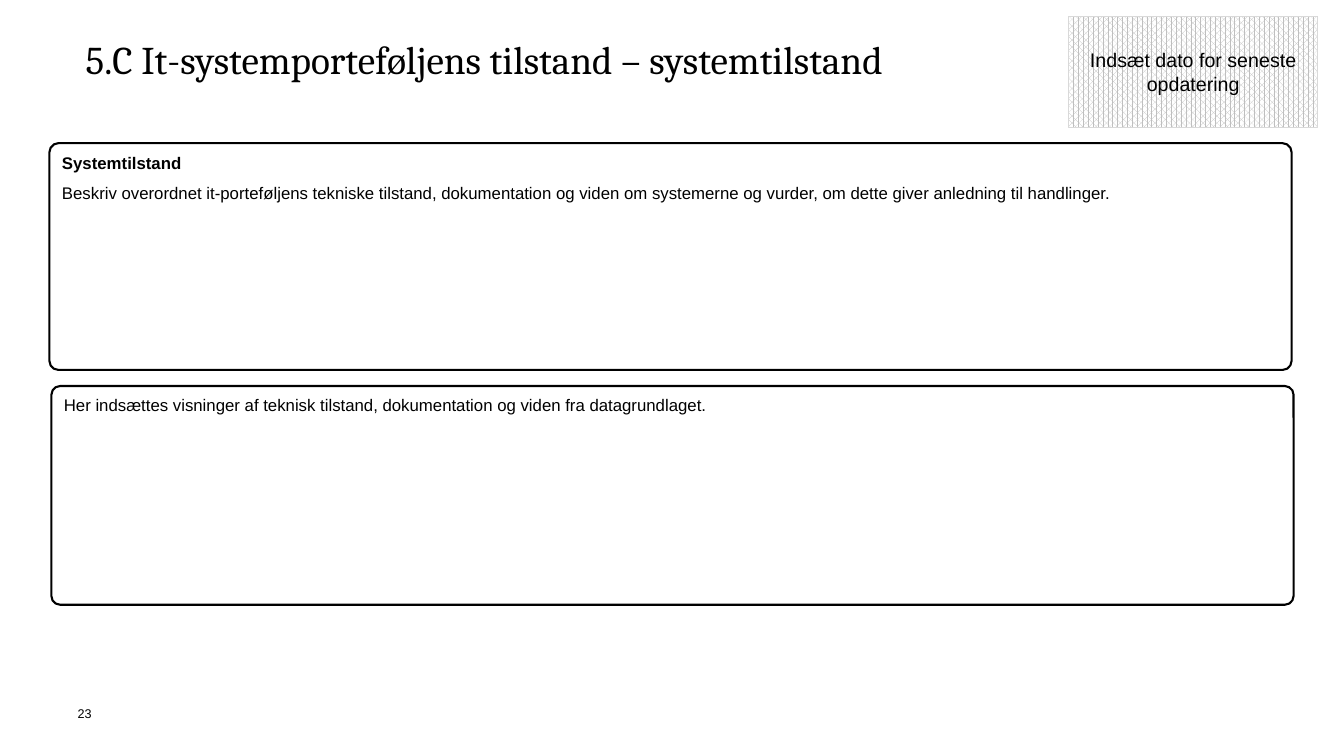
from dataclasses import dataclass

import pptx
import pptx.dml.color
import pptx.enum.dml
import pptx.enum.shapes
import pptx.enum.text
import pptx.util

Inches = pptx.util.Inches
Pt = pptx.util.Pt
RGB = pptx.dml.color.RGBColor
SHAPE = pptx.enum.shapes.MSO_SHAPE
ALIGN = pptx.enum.text.PP_ALIGN
ANCHOR = pptx.enum.text.MSO_ANCHOR


@dataclass(frozen=True)
class Theme:
    ink: RGB = RGB(0x00, 0x00, 0x00)
    paper: RGB = RGB(0xFF, 0xFF, 0xFF)
    hatch: RGB = RGB(0xBF, 0xBF, 0xBF)
    pale_line: RGB = RGB(0xD9, 0xD9, 0xD9)
    heading_font: str = "Cambria"
    body_font: str = "Arial"
    title_size: float = 28
    date_size: float = 14
    body_size: float = 12
    number_size: float = 9


THEME = Theme()


@dataclass(frozen=True)
class Box:
    left: float
    top: float
    width: float
    height: float

    def emu(self) -> tuple:
        return tuple(Inches(v) for v in (self.left, self.top, self.width, self.height))


@dataclass(frozen=True)
class Panel:
    box: Box
    lines: tuple[str, ...]
    has_heading: bool = False


PANELS = (
    Panel(
        Box(0.49, 1.42, 12.32, 2.25),
        (
            "Systemtilstand",
            "Beskriv overordnet it-porteføljens tekniske tilstand, dokumentation og viden "
            "om systemerne og vurder, om dette giver anledning til handlinger.",
        ),
        has_heading=True,
    ),
    Panel(
        Box(0.51, 3.83, 12.32, 2.17),
        ("Her indsættes visninger af teknisk tilstand, dokumentation og viden fra datagrundlaget.",),
    ),
)


def style(p, size: float, font: str = THEME.body_font, bold: bool = False,
          align=ALIGN.LEFT) -> None:
    p.alignment = align
    for r in p.runs:
        r.font.size = Pt(size)
        r.font.name = font
        r.font.bold = bold
        r.font.color.rgb = THEME.ink


def add_label(slide, box: Box, text: str, size: float, font: str, indent: float = 0):
    tf = slide.shapes.add_textbox(*box.emu()).text_frame
    tf.word_wrap = True
    tf.margin_left = Inches(indent)
    tf.margin_top = tf.margin_right = tf.margin_bottom = 0
    tf.text = text
    style(tf.paragraphs[0], size, font)
    return tf.paragraphs[0]


def add_outlined(slide, kind, box: Box, line: RGB, weight: float, anchor):
    sp = slide.shapes.add_shape(kind, *box.emu())
    sp.shadow.inherit = False
    sp.line.color.rgb = line
    sp.line.width = Pt(weight)
    sp.text_frame.word_wrap = True
    sp.text_frame.vertical_anchor = anchor
    return sp


def add_panel(slide, panel: Panel) -> None:
    sp = add_outlined(slide, SHAPE.ROUNDED_RECTANGLE, panel.box, THEME.ink, 1.5, ANCHOR.TOP)
    sp.adjustments[0] = 0.04
    sp.fill.background()
    tf = sp.text_frame
    tf.text = "\n".join(panel.lines)
    for i, p in enumerate(tf.paragraphs):
        p.line_spacing = 1.08
        if i:
            p.space_before = Pt(6.5)
        style(p, THEME.body_size, bold=panel.has_heading and i == 0)


def add_date_field(slide) -> None:
    sp = add_outlined(slide, SHAPE.RECTANGLE, Box(10.6, 0.16, 2.47, 1.1),
                      THEME.pale_line, 0.5, ANCHOR.MIDDLE)
    sp.fill.patterned()
    sp.fill.pattern = pptx.enum.dml.MSO_PATTERN.PERCENT_70
    sp.fill.fore_color.rgb = THEME.hatch
    sp.fill.back_color.rgb = THEME.paper
    sp.text_frame.text = "Indsæt dato for seneste opdatering"
    style(sp.text_frame.paragraphs[0], THEME.date_size, align=ALIGN.CENTER)


def main() -> None:
    prs = pptx.Presentation()
    prs.slide_width, prs.slide_height = Inches(13.33), Inches(7.5)
    slide = prs.slides.add_slide(prs.slide_layouts[6])

    # Page number and title
    add_label(slide, Box(0.77, 7, 0.31, 0.3), "23", THEME.number_size, THEME.body_font)
    title = add_label(slide, Box(0.77, 0.4, 11.8, 1.02),
                      "5.C It-systemporteføljens tilstand – systemtilstand",
                      THEME.title_size, THEME.heading_font, indent=0.08)
    title.line_spacing = 0.9

    # Description panels
    for panel in PANELS:
        add_panel(slide, panel)

    # Date of latest update
    add_date_field(slide)

    prs.save("out.pptx")


if __name__ == "__main__":
    main()
